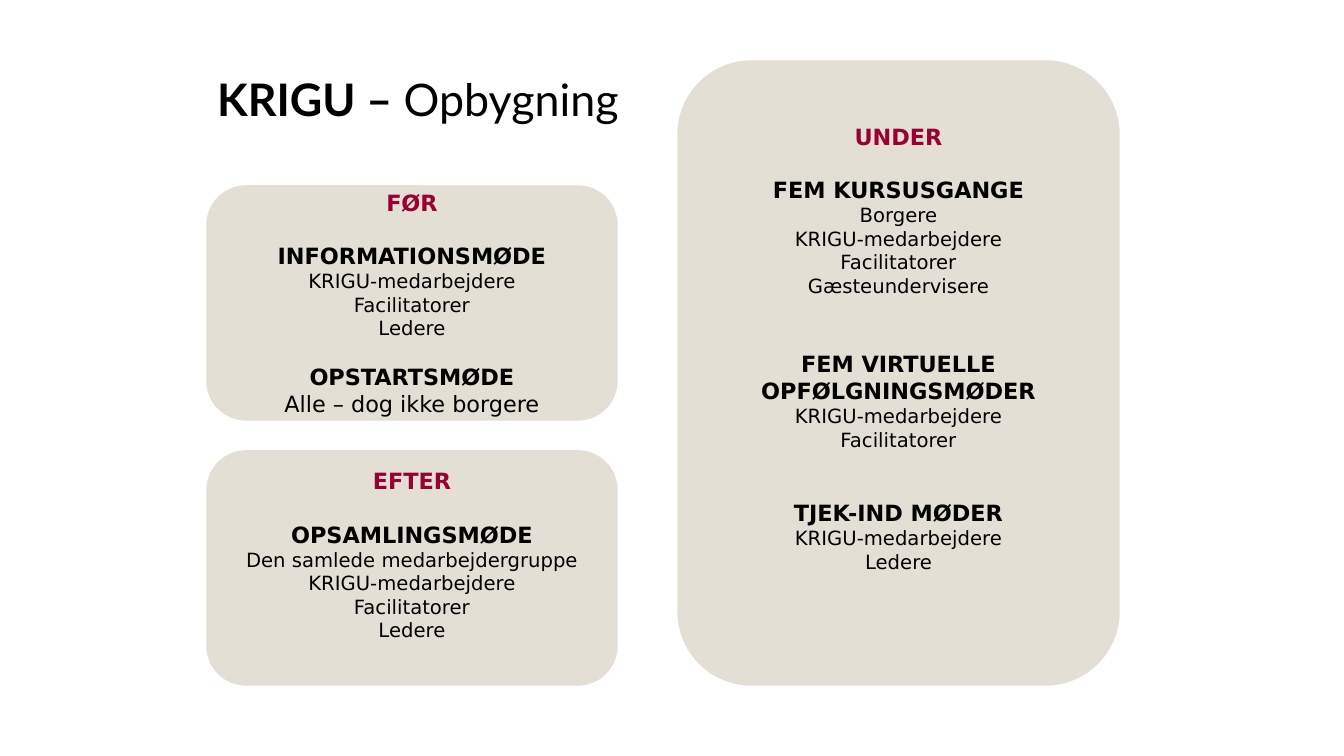
from pptx import Presentation
from pptx import util as u
from pptx.dml import color
from pptx.enum import shapes, text


def rgb(value):
    return color.RGBColor.from_string(value)


class Deck:
    """Hold the style and the current slide, with lengths in px."""

    EMU_PER_PX = 914400 / 100.8
    INK, ACCENT, PANEL = "000000", "990033", "E3DFD4"
    TITLE_FONT, BODY_FONT = "Lato", "DejaVu Sans"
    LINE_STYLES = {
        "phase": (16, True, ACCENT),
        "meeting": (16, True, INK),
        "people": (14, False, INK),
        "note": (16, False, INK),
    }

    def __init__(self):
        self.presentation = Presentation()
        self.presentation.slide_width = self.px(1344)
        self.presentation.slide_height = self.px(756)
        self.slide = self.presentation.slides.add_slide(self.presentation.slide_layouts[5])

    def px(self, length):
        return u.Emu(round(length * self.EMU_PER_PX))

    def format_run(self, run, font, size, bold, ink):
        run.font.name = font
        run.font.size = u.Pt(size)
        run.font.bold = bold
        run.font.color.rgb = rgb(ink)

    def title(self, left, top, width, height, parts):
        shape = self.slide.shapes.title
        shape.left, shape.top = self.px(left), self.px(top)
        shape.width, shape.height = self.px(width), self.px(height)
        frame = shape.text_frame
        frame.auto_size = text.MSO_AUTO_SIZE.NONE
        frame.vertical_anchor = text.MSO_ANCHOR.TOP
        paragraph = frame.paragraphs[0]
        paragraph.alignment = text.PP_ALIGN.LEFT
        for words, bold in parts:
            run = paragraph.add_run()
            run.text = words
            self.format_run(run, self.TITLE_FONT, 32, bold, self.INK)

    def panel(self, left, top, width, height, bottom_inset, lines):
        shape = self.slide.shapes.add_shape(
            shapes.MSO_SHAPE.ROUNDED_RECTANGLE,
            self.px(left), self.px(top), self.px(width), self.px(height))
        shape.shadow.inherit = False
        shape.fill.solid()
        shape.fill.fore_color.rgb = rgb(self.PANEL)
        shape.line.color.rgb = rgb(self.PANEL)
        shape.line.width = u.Pt(1)
        frame = shape.text_frame
        frame.word_wrap = True
        frame.vertical_anchor = text.MSO_ANCHOR.MIDDLE
        frame.margin_top = 0
        frame.margin_bottom = self.px(bottom_inset)
        for index, (style, gap, words) in enumerate(lines):
            paragraph = frame.paragraphs[0] if index == 0 else frame.add_paragraph()
            paragraph.text = words
            paragraph.alignment = text.PP_ALIGN.CENTER
            if gap:
                paragraph.space_before = u.Pt(gap)
            self.format_run(paragraph.runs[0], self.BODY_FONT, *self.LINE_STYLES[style])

    def save(self):
        self.presentation.save("out.pptx")


def meeting(gap, name, *people):
    return [("meeting", gap, name)] + [("people", 0, group) for group in people]


def main():
    deck = Deck()
    deck.title(207, 67, 1034, 65, [("KRIGU – ", True), ("Opbygning", False)])

    before = [
        ("phase", 0, "FØR"),
        *meeting(19, "INFORMATIONSMØDE", "KRIGU-medarbejdere", "Facilitatorer", "Ledere"),
        *meeting(17, "OPSTARTSMØDE"),
        ("note", 0, "Alle – dog ikke borgere"),
    ]
    during = [
        ("phase", 0, "UNDER"),
        *meeting(19, "FEM KURSUSGANGE", "Borgere", "KRIGU-medarbejdere",
                 "Facilitatorer", "Gæsteundervisere"),
        *meeting(38, "FEM VIRTUELLE OPFØLGNINGSMØDER", "KRIGU-medarbejdere", "Facilitatorer"),
        *meeting(34, "TJEK-IND MØDER", "KRIGU-medarbejdere", "Ledere"),
    ]
    after = [
        ("phase", 0, "EFTER"),
        *meeting(19, "OPSAMLINGSMØDE", "Den samlede medarbejdergruppe",
                 "KRIGU-medarbejdere", "Facilitatorer", "Ledere"),
    ]
    deck.panel(207, 186, 410, 234, 0, before)
    deck.panel(678, 61, 441, 624, 50, during)
    deck.panel(207, 451, 410, 234, 27, after)
    deck.save()


if __name__ == "__main__":
    main()
